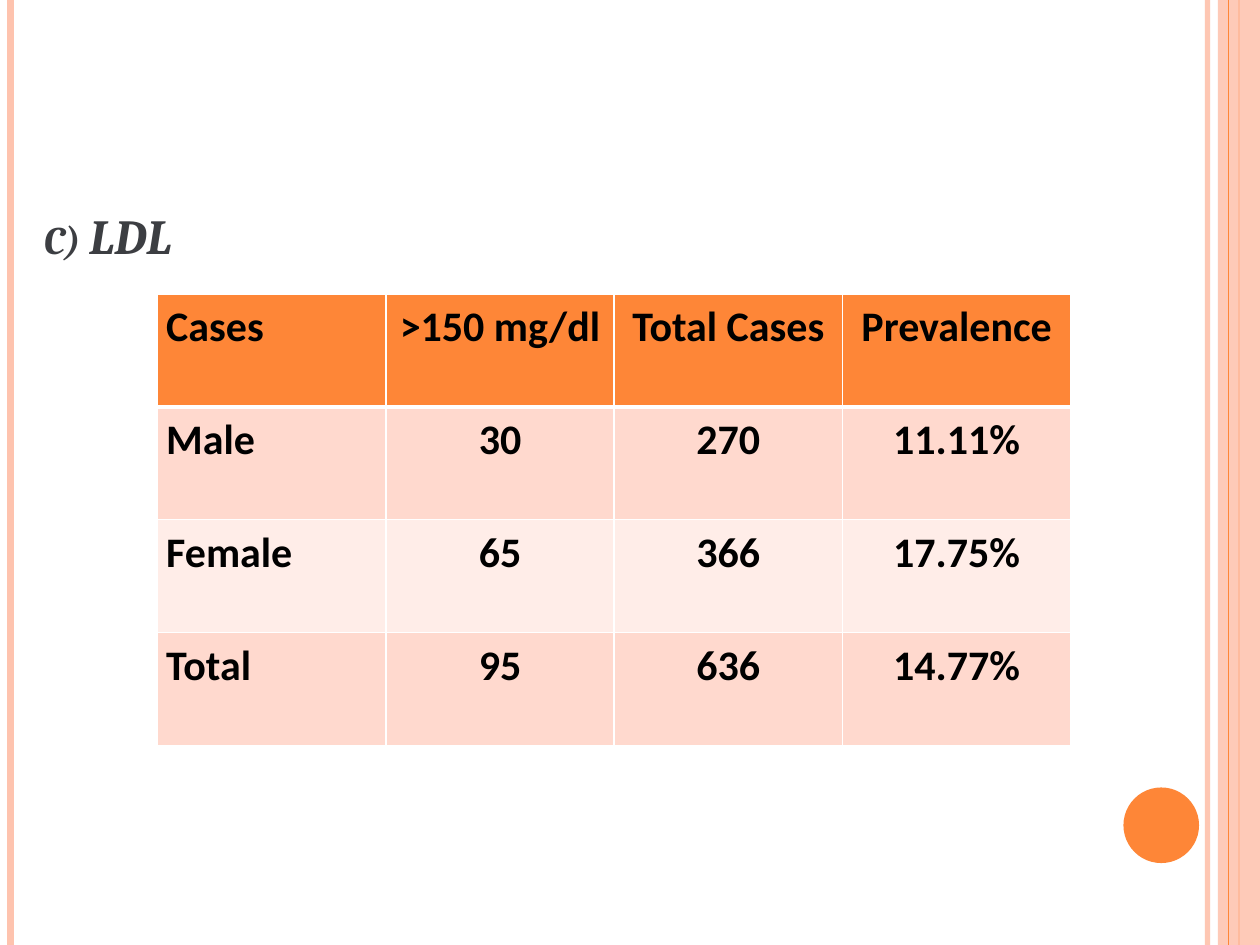
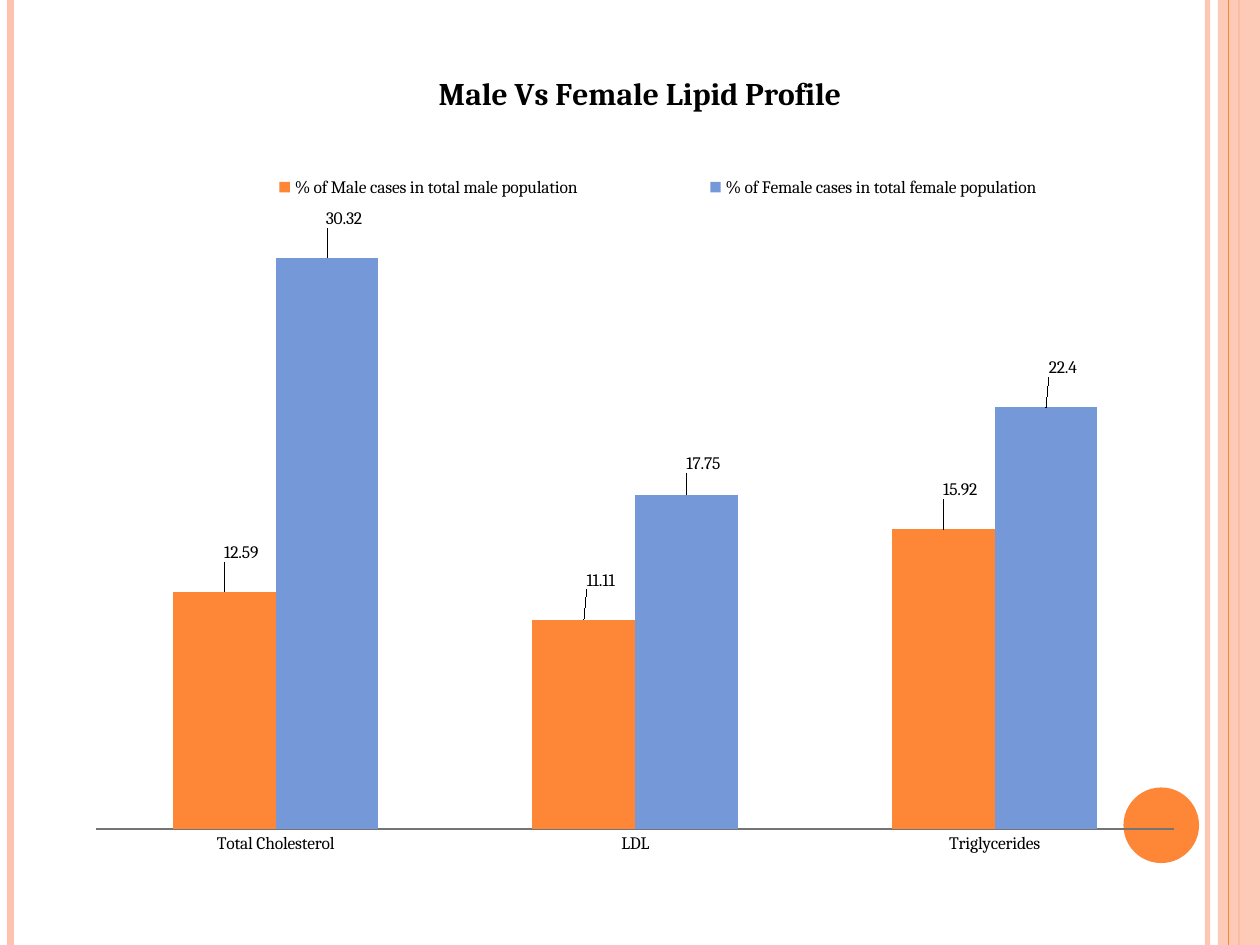
import pptx
import pptx.util
import pptx.chart.data
import pptx.dml.color
import pptx.enum.chart
import pptx.enum.shapes
import pptx.enum.text
import pptx.oxml
import pptx.oxml.ns
from lxml import etree

Pt = pptx.util.Pt
qn = pptx.oxml.ns.qn

ORANGE, PEACH, BLUE = "FE8637", "FEC3AE", "7598D9"
WHITE, BLACK, SLATE, GREY = "FFFFFF", "000000", "3C3E42", "747474"
BANDS = ["FFD9CE", "FFEDE8"]
WIDE, HIGH = 720, 540


def paint(color, tint):
    color.rgb = pptx.dml.color.RGBColor.from_string(tint)


def fade(part, alpha):
    for clr in part.iter(qn("a:srgbClr")):
        etree.SubElement(clr, qn("a:alpha")).set("val", str(alpha * 1000))


def layout(**sizes):
    ns = pptx.oxml.ns.nsdecls("c")
    modes = "".join(f'<c:{k}Mode val="edge"/>' for k in "xy") if "mode" in sizes else ""
    inner = '<c:layoutTarget val="inner"/>' if "plot" in sizes else ""
    vals = "".join(f'<c:{k} val="{sizes[k]}"/>' for k in "xywh" if k in sizes)
    return pptx.oxml.parse_xml(
        f"<c:layout {ns}><c:manualLayout>{inner}{modes}{vals}</c:manualLayout></c:layout>")


def place(part, after, **sizes):
    for old in part.findall(qn("c:layout")):
        part.remove(old)
    spot = part.find(qn(after)) if after else None
    if spot is None:
        part.insert(0, layout(**sizes))
    else:
        spot.addnext(layout(**sizes))


class Deck:
    def __init__(self):
        self.file = pptx.Presentation()
        self.file.slide_width, self.file.slide_height = Pt(WIDE), Pt(HIGH)
        self.slide = None

    def start(self):
        self.slide = self.file.slides.add_slide(self.file.slide_layouts[6])
        self.rule(690, PEACH, 3, 93)
        self.rule(6, PEACH, 4.5)
        self.rule(708, ORANGE, 1.5)
        self.shape("RECTANGLE", (696, 0, 24, HIGH), PEACH, 87)
        self.rule(702, ORANGE, 0.75)
        self.shape("OVAL", (642, 450, 43.2, 43.2), ORANGE)

    def rule(self, x, tint, width, alpha=100):
        kind = pptx.enum.shapes.MSO_CONNECTOR.STRAIGHT
        line = self.slide.shapes.add_connector(kind, Pt(x), Pt(0), Pt(x), Pt(HIGH))
        paint(line.line.color, tint)
        line.line.width = Pt(width)
        props = line._element.spPr
        if alpha < 100:
            fade(props, alpha)
        etree.SubElement(props, qn("a:effectLst"))

    def shape(self, kind, box, tint, alpha=100):
        form = pptx.enum.shapes.MSO_SHAPE[kind]
        item = self.slide.shapes.add_shape(form, *map(Pt, box))
        item.shadow.inherit = False
        item.fill.solid()
        paint(item.fill.fore_color, tint)
        item.line.fill.background()
        if alpha < 100:
            fade(item._element.spPr, alpha)

    def font(self, font, name, size, tint, bold=False, slant=False):
        font.name, font.size = name, Pt(size)
        font.bold, font.italic = bold, slant
        paint(font.color, tint)

    def title(self, text, box):
        frame = self.slide.shapes.add_textbox(*map(Pt, box)).text_frame
        frame.word_wrap = True
        frame.vertical_anchor = pptx.enum.text.MSO_ANCHOR.BOTTOM
        frame.margin_bottom = Pt(35)
        para = frame.paragraphs[0]
        self.font(para.font, "Cambria", 28, SLATE, True, True)
        run = para.add_run()
        run.text = text
        run._r.get_or_add_rPr().set("cap", "small")

    def edge(self, cell, base):
        props = cell._tc.get_or_add_tcPr()
        ns = pptx.oxml.ns.nsdecls("a")
        for i, side in enumerate("LRTB"):
            width = Pt(base if side == "B" else 1)
            props.insert(i, pptx.oxml.parse_xml(
                f'<a:ln{side} {ns} w="{width}"><a:solidFill>'
                f'<a:srgbClr val="{WHITE}"/></a:solidFill></a:ln{side}>'))

    def table(self, rows, box):
        grid = self.slide.shapes.add_table(len(rows), len(rows[0]), *map(Pt, box)).table
        align = pptx.enum.text.PP_ALIGN
        for r, row in enumerate(rows):
            for c, text in enumerate(row):
                cell = grid.cell(r, c)
                cell.text = text
                cell.margin_left = cell.margin_right = Pt(5)
                cell.margin_top = cell.margin_bottom = 0
                cell.fill.solid()
                paint(cell.fill.fore_color, BANDS[(r - 1) % 2] if r else ORANGE)
                self.edge(cell, 1 if r else 3)
                para = cell.text_frame.paragraphs[0]
                para.alignment = align.CENTER if c else align.LEFT
                para.line_spacing = 1.15
                self.font(para.font, "Calibri", 24, BLACK, True)

    def chart(self, title, cats, sets, box):
        enum = pptx.enum.chart
        data = pptx.chart.data.CategoryChartData()
        data.categories = cats
        for name, vals, _, _ in sets:
            data.add_series(name, vals)
        kind = enum.XL_CHART_TYPE.COLUMN_CLUSTERED
        chart = self.slide.shapes.add_chart(kind, *map(Pt, box), data).chart
        self.font(chart.font, "Cambria", 10, BLACK)

        chart.has_title = True
        head = chart.chart_title
        head.text_frame.text = title
        self.font(head.text_frame.paragraphs[0].font, "Cambria", 18, BLACK, True)
        place(head._element, "c:tx", mode=1, x=0.32, y=0.03)

        chart.has_legend = True
        key = chart.legend
        key.position = enum.XL_LEGEND_POSITION.TOP
        key.include_in_layout = False
        place(key._element, "c:legendPos", mode=1, x=0.07, y=0.15, w=0.9, h=0.05)

        axis = chart.category_axis
        axis.major_tick_mark = enum.XL_TICK_MARK.NONE
        paint(axis.format.line.color, GREY)
        axis.format.line.width = Pt(1)
        scale = chart.value_axis
        scale.minimum_scale, scale.maximum_scale = 0, 35
        scale.has_major_gridlines = False
        scale.visible = False

        plot = chart.plots[0]
        plot.gap_width, plot.overlap = 150, 0
        plot.vary_by_categories = False
        area = plot._element.getparent()
        place(area, None, plot=1, mode=1, x=0.02, y=0.154, w=0.96, h=0.795)
        for bars, (_, _, tint, lifts) in zip(plot.series, sets):
            bars.format.fill.solid()
            paint(bars.format.fill.fore_color, tint)
            bars.data_labels.show_value = True
            for i in range(len(lifts)):
                spot = enum.XL_LABEL_POSITION.OUTSIDE_END
                bars.points[i].data_label.position = spot
            for tag, lift in zip(bars._element.iter(qn("c:dLbl")), lifts):
                place(tag, "c:idx", x=0.015, y=-lift)


def main():
    deck = Deck()
    deck.start()
    deck.title("c) LDL", (18, 108, 270, 78))
    deck.table([
        ["Cases", ">150 mg/dl", "Total Cases", "Prevalence"],
        ["Male", "30", "270", "11.11%"],
        ["Female", "65", "366", "17.75%"],
        ["Total", "95", "636", "14.77%"],
    ], (90, 168, 522, 258))

    deck.start()
    deck.chart(
        "Male Vs Female Lipid Profile",
        ["Total Cholesterol", "LDL", "Triglycerides"],
        [("% of Male cases in total male population",
          [12.59, 11.11, 15.92], ORANGE, [0.03, 0.03, 0.03]),
         ("% of Female cases in total female population",
          [30.32, 17.75, 22.4], BLUE, [0.03, 0.02, 0.03])],
        (42, 24, 642, 474))
    deck.file.save("out.pptx")


if __name__ == "__main__":
    main()
